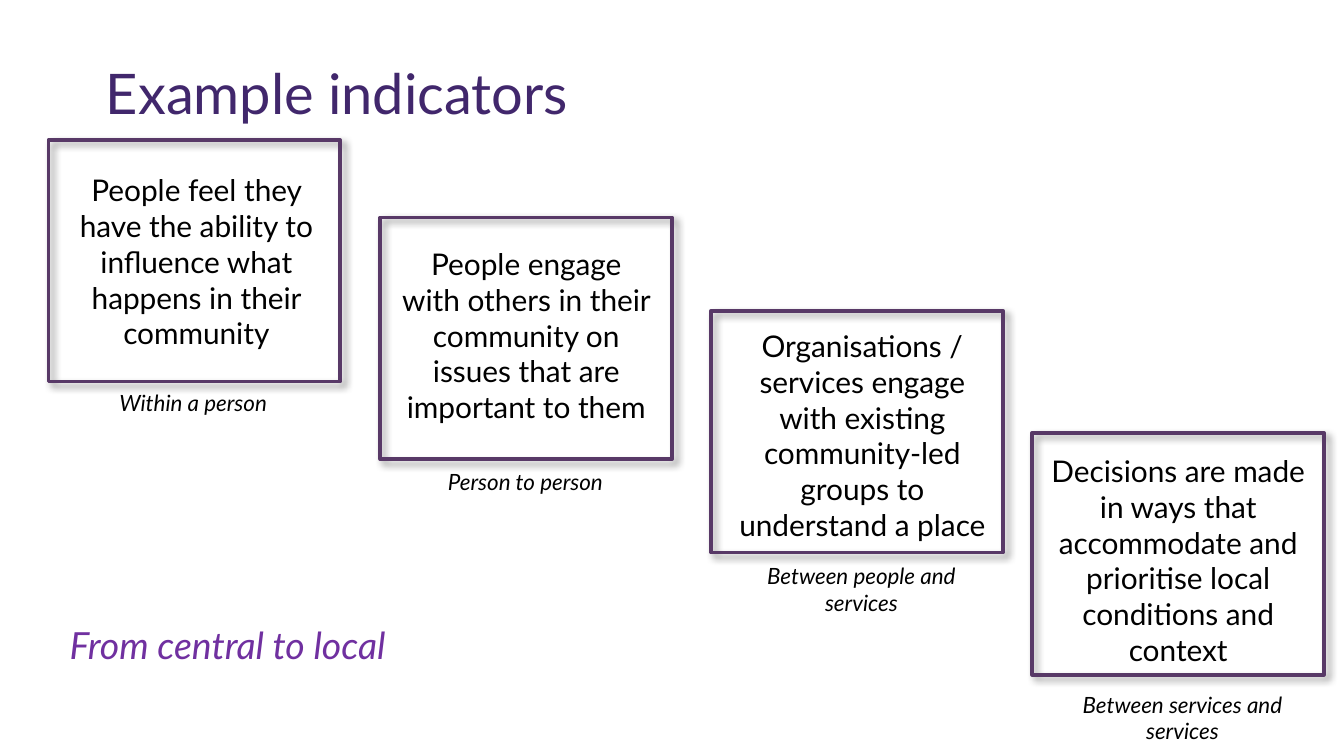
from lxml.etree import fromstring
from pptx import Presentation
from pptx.dml.color import RGBColor
from pptx.enum.shapes import MSO_SHAPE
from pptx.enum.text import MSO_ANCHOR, MSO_AUTO_SIZE, PP_ALIGN
from pptx.util import Pt

FONT = "Lato"
INDIGO = RGBColor(0x41, 0x27, 0x6C)
PLUM = RGBColor(0x58, 0x39, 0x67)
VIOLET = RGBColor(0x70, 0x30, 0xA0)
BLACK = RGBColor(0, 0, 0)

TITLE = "Example indicators"
FOOTNOTE = "From central to local"

# Steps: frame (left, top), text (left, top, width, height), caption (left, top, height)
STEPS = [
    ("People feel they have the ability to influence what happens in their community",
     "Within a person",
     (26, 75), (30.25, 88.5, 150, 104.5), (28, 205, 21.6)),
    ("People engage with others in their community on issues that are important to them",
     "Person to person",
     (203.75, 116.5), (207.5, 128, 149, 104.5), (206, 247, 21.6)),
    ("Organisations / services engage with existing community-led groups to understand a place",
     "Between people and services",
     (381, 166.5), (384, 172, 156, 124), (386, 297.5, 36)),
    ("Decisions are made in ways that accommodate and prioritise local conditions and context",
     "Between services and services",
     (553, 232), (555, 239, 152.5, 124), (558, 366.5, 36)),
]
FRAME_W, FRAME_H = 156.25, 129.5
CAPTION_W = 151

# Shadow: 4 pt blur, 3 pt distance, 45 degrees, 40 % black
SHADOW = (
    '<a:effectLst xmlns:a="http://schemas.openxmlformats.org/drawingml/2006/main">'
    '<a:outerShdw blurRad="50800" dist="38100" dir="2700000" algn="tl" rotWithShape="0">'
    '<a:srgbClr val="000000"><a:alpha val="40000"/></a:srgbClr>'
    '</a:outerShdw></a:effectLst>'
)


def write(tf, text, size, color, align=PP_ALIGN.LEFT, italic=False):
    tf.word_wrap = True
    p = tf.paragraphs[0]
    p.alignment = align
    r = p.add_run()
    r.text = text
    r.font.name = FONT
    r.font.size = Pt(size)
    r.font.italic = italic
    r.font.color.rgb = color


def add_text(s, box, text, size, color, align=PP_ALIGN.CENTER, italic=False):
    tf = s.shapes.add_textbox(*map(Pt, box)).text_frame
    write(tf, text, size, color, align, italic)
    tf.auto_size = MSO_AUTO_SIZE.SHAPE_TO_FIT_TEXT


def add_frame(s, left, top):
    sp = s.shapes.add_shape(MSO_SHAPE.RECTANGLE, Pt(left), Pt(top), Pt(FRAME_W), Pt(FRAME_H))
    sp.fill.background()
    sp.line.color.rgb = PLUM
    sp.line.width = Pt(2)
    sp._element.spPr.append(fromstring(SHADOW))


def main():
    prs = Presentation()
    prs.slide_width, prs.slide_height = Pt(720), Pt(405)
    s = prs.slides.add_slide(prs.slide_layouts[5])

    # Title
    title = s.shapes.title
    title.left, title.top, title.width, title.height = map(Pt, (49.5, 24, 609, 51))
    tf = title.text_frame
    tf.margin_left = tf.margin_right = tf.margin_top = tf.margin_bottom = Pt(7.2)
    tf.vertical_anchor = MSO_ANCHOR.MIDDLE
    tf.auto_size = MSO_AUTO_SIZE.NONE
    write(tf, TITLE, 30, INDIGO)

    # Descending steps with captions
    for indicator, level, frame, text_box, (left, top, height) in STEPS:
        add_frame(s, *frame)
        add_text(s, text_box, indicator, 16, BLACK)
        add_text(s, (left, top, CAPTION_W, height), level, 12, BLACK, italic=True)

    # Closing line
    add_text(s, (30.25, 330, 258, 31.5), FOOTNOTE, 20, VIOLET, PP_ALIGN.LEFT, italic=True)

    prs.save("out.pptx")


if __name__ == "__main__":
    main()
